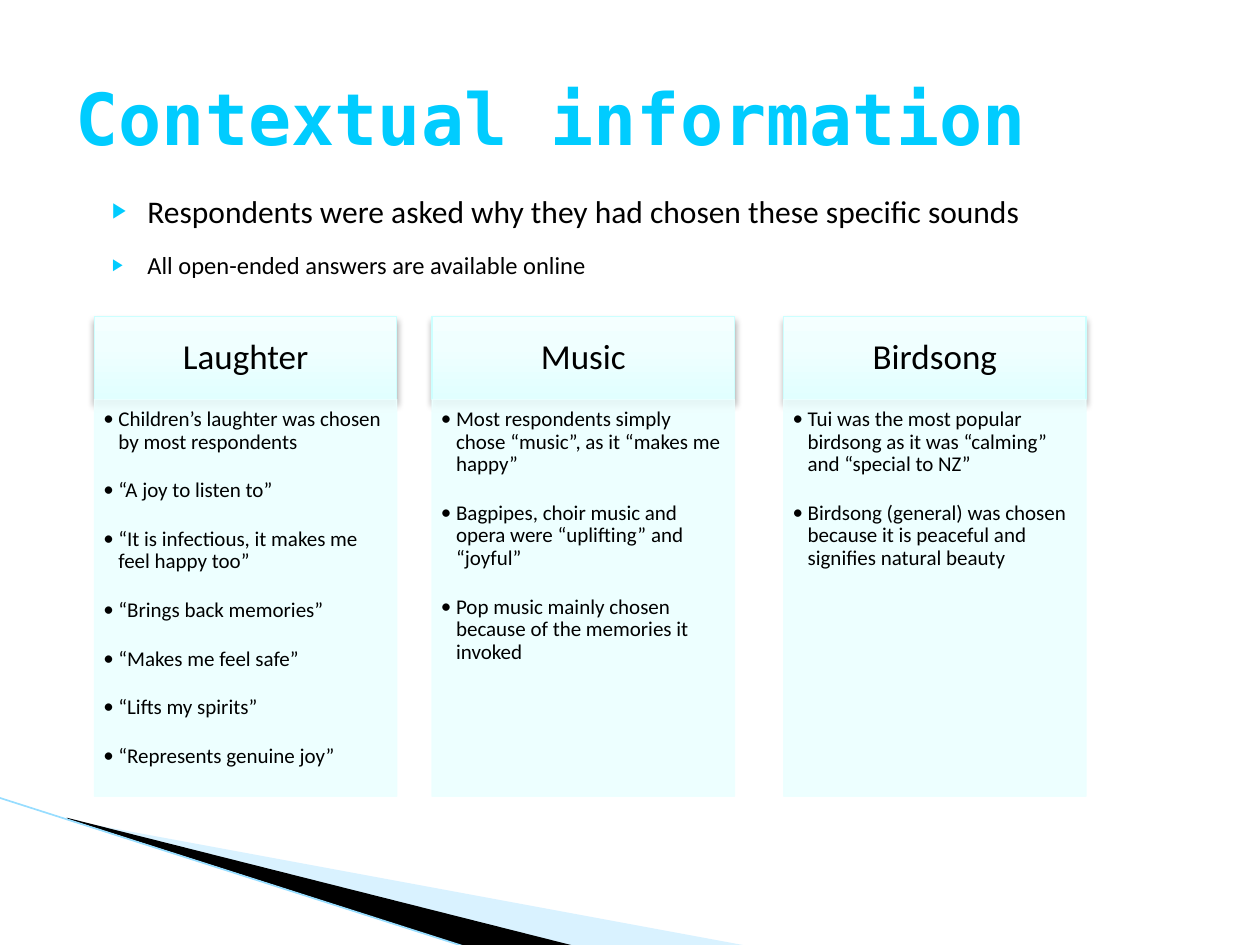
from lxml.etree import SubElement
from pptx import Presentation
from pptx.dml.color import RGBColor
from pptx.enum.shapes import MSO_CONNECTOR, MSO_SHAPE
from pptx.enum.text import MSO_ANCHOR, MSO_AUTO_SIZE, PP_ALIGN
from pptx.oxml import parse_xml
from pptx.oxml.ns import nsdecls, qn
from pptx.util import Inches, Pt

COLORS = {
    "accent": "00CCFF",
    "text": "000000",
    "wedge_light": "A2E0FF",
    "wedge_dark": "000000",
    "wedge_line": "97DDFF",
    "header_line": "CCFFFF",
    "panel": "ECFFFF",
}
HEADER_STOPS = [(0, "E1FFFF"), (65, "F0FFFF"), (100, "F4FFFF")]
BODY_FONT = "Calibri"
TITLE_FONT = "DejaVu Sans Mono"

# Column grid, in inches
COLUMN_LEFTS = [0.75, 3.43, 6.22]
COLUMN_WIDTH = 2.4
HEADER_TOP, HEADER_HEIGHT = 2.51, 0.66
PANEL_TOP, PANEL_HEIGHT = HEADER_TOP + HEADER_HEIGHT, 3.15

INTRO = [
    ("Respondents were asked why they had chosen these specific sounds", 18),
    ("All open-ended answers are available online", 14),
]
COLUMNS = [
    ("Laughter", [
        "Children’s laughter was chosen by most respondents",
        "“A joy to listen to”",
        "“It is infectious, it makes me feel happy too”",
        "“Brings back memories”",
        "“Makes me feel safe”",
        "“Lifts my spirits”",
        "“Represents genuine joy”",
    ]),
    ("Music", [
        "Most respondents simply chose “music”, as it “makes me happy”",
        "Bagpipes, choir music and opera were “uplifting” and “joyful”",
        "Pop music mainly chosen because of the memories it invoked",
    ]),
    ("Birdsong", [
        "Tui was the most popular birdsong as it was “calming” and “special to NZ”",
        "Birdsong (general) was chosen because it is peaceful and signifies natural beauty",
    ]),
]


def rgb(name):
    return RGBColor.from_string(COLORS[name])


def box(*lengths):
    return [Inches(length) for length in lengths]


def place(shape, *lengths):
    shape.left, shape.top, shape.width, shape.height = box(*lengths)


def set_alpha(fill, percent):
    color = fill._xPr.find(qn("a:solidFill"))[0]
    SubElement(color, qn("a:alpha")).set("val", str(percent * 1000))


def add_run(paragraph, text, size, color="text", font=BODY_FONT, bold=False):
    run = paragraph.add_run()
    run.text = text
    run.font.size = Pt(size)
    run.font.name = font
    run.font.bold = bold
    run.font.color.rgb = rgb(color)


def set_bullet(paragraph, character, margin, indent, color="text", percent=100):
    properties = paragraph._p.get_or_add_pPr()
    properties.set("marL", str(Inches(margin)))
    properties.set("indent", str(Inches(indent)))
    bullet_color = SubElement(properties, qn("a:buClr"))
    SubElement(bullet_color, qn("a:srgbClr")).set("val", COLORS[color])
    SubElement(properties, qn("a:buSzPct")).set("val", str(percent * 1000))
    SubElement(properties, qn("a:buFont")).set("typeface", BODY_FONT)
    SubElement(properties, qn("a:buChar")).set("char", character)


def set_frame(frame, anchor, insets):
    frame.word_wrap = True
    frame.auto_size = MSO_AUTO_SIZE.NONE
    frame.vertical_anchor = anchor
    (frame.margin_left, frame.margin_top,
     frame.margin_right, frame.margin_bottom) = box(*insets)


def paragraphs_for(frame, items):
    for index, item in enumerate(items):
        yield index, frame.paragraphs[0] if index == 0 else frame.add_paragraph(), item


def add_wedge(slide, points, color, alpha=100):
    start, *others = [box(*point) for point in points]
    builder = slide.shapes.build_freeform(*start, scale=1.0)
    builder.add_line_segments(others, close=True)
    wedge = builder.convert_to_shape()
    wedge.shadow.inherit = False
    wedge.fill.solid()
    wedge.fill.fore_color.rgb = rgb(color)
    set_alpha(wedge.fill, alpha)
    wedge.line.fill.background()


def add_corner(slide):
    add_wedge(slide, [(0.55, 6.51), (5.95, 7.51), (4.56, 7.51), (0.55, 6.5)],
              "wedge_light", 40)
    add_wedge(slide, [(0.53, 6.49), (4.57, 7.51), (3.72, 7.52), (0.54, 6.5)],
              "wedge_dark")
    edge = slide.shapes.add_connector(MSO_CONNECTOR.STRAIGHT,
                                      *box(-0.01, 6.33, 3.71, 7.52))
    edge.line.color.rgb = rgb("wedge_line")
    edge.line.width = Pt(0.95)
    SubElement(edge._element.spPr, qn("a:effectLst"))


def fill_title(slide):
    title = slide.shapes.title
    place(title, 0.5, 0.3, 9, 1.25)
    set_frame(title.text_frame, MSO_ANCHOR.MIDDLE, (0.1, 0.05, 0.1, 0.05))
    paragraph = title.text_frame.paragraphs[0]
    paragraph.alignment = PP_ALIGN.LEFT
    add_run(paragraph, "Contextual information", 41, "accent", TITLE_FONT, True)


def fill_intro(slide):
    body = slide.placeholders[1]
    place(body, 0.67, 1.47, 9, 4.95)
    set_frame(body.text_frame, MSO_ANCHOR.TOP, (0.1, 0.05, 0.1, 0.05))
    for index, paragraph, (text, size) in paragraphs_for(body.text_frame, INTRO):
        set_bullet(paragraph, "▶", 0.4, -0.28, "accent", 68)
        paragraph.space_before = Pt(6 if index else 0)
        paragraph.space_after = Pt(6)
        add_run(paragraph, text, size)


def add_rectangle(slide, left, top, height, line_color):
    shape = slide.shapes.add_shape(MSO_SHAPE.RECTANGLE,
                                   *box(left, top, COLUMN_WIDTH, height))
    shape.shadow.inherit = False
    shape.line.color.rgb = rgb(line_color)
    shape.line.width = Pt(0.75)
    return shape


def add_header(slide, left, text):
    header = add_rectangle(slide, left, HEADER_TOP, HEADER_HEIGHT, "header_line")
    # Three-stop gradient running upwards
    stops = "".join(f'<a:gs pos="{position * 1000}"><a:srgbClr val="{color}"/></a:gs>'
                    for position, color in HEADER_STOPS)
    properties = header._element.spPr
    properties.find(qn("a:prstGeom")).addnext(parse_xml(
        f'<a:gradFill {nsdecls("a")}><a:gsLst>{stops}</a:gsLst>'
        '<a:lin ang="16200000" scaled="0"/></a:gradFill>'))
    # Soft shadow below
    properties.find(qn("a:effectLst")).append(parse_xml(
        f'<a:outerShdw {nsdecls("a")} blurRad="{Pt(4)}" dist="{Pt(3)}" dir="5400000" '
        'rotWithShape="0"><a:srgbClr val="000000"><a:alpha val="35000"/></a:srgbClr>'
        '</a:outerShdw>'))
    set_frame(header.text_frame, MSO_ANCHOR.MIDDLE, (0.16, 0.09, 0.16, 0.09))
    paragraph = header.text_frame.paragraphs[0]
    paragraph.alignment = PP_ALIGN.CENTER
    paragraph.line_spacing = 0.9
    add_run(paragraph, text, 20)


def add_panel(slide, left, answers):
    panel = add_rectangle(slide, left, PANEL_TOP, PANEL_HEIGHT, "panel")
    panel.fill.solid()
    panel.fill.fore_color.rgb = rgb("panel")
    set_alpha(panel.fill, 90)
    set_alpha(panel.line.fill, 90)
    set_frame(panel.text_frame, MSO_ANCHOR.TOP, (0.07, 0.07, 0.09, 0.1))
    for _, paragraph, answer in paragraphs_for(panel.text_frame, answers):
        set_bullet(paragraph, "•", 0.12, -0.12)
        paragraph.alignment = PP_ALIGN.LEFT
        paragraph.line_spacing = 0.9
        paragraph.space_after = Pt(14.8)
        add_run(paragraph, answer, 12)


def main():
    presentation = Presentation()
    presentation.slide_width, presentation.slide_height = box(10, 7.5)
    slide = presentation.slides.add_slide(presentation.slide_layouts[1])
    add_corner(slide)
    fill_title(slide)
    fill_intro(slide)
    for left, (heading, answers) in zip(COLUMN_LEFTS, COLUMNS):
        add_header(slide, left, heading)
        add_panel(slide, left, answers)
    presentation.save("out.pptx")


if __name__ == "__main__":
    main()
